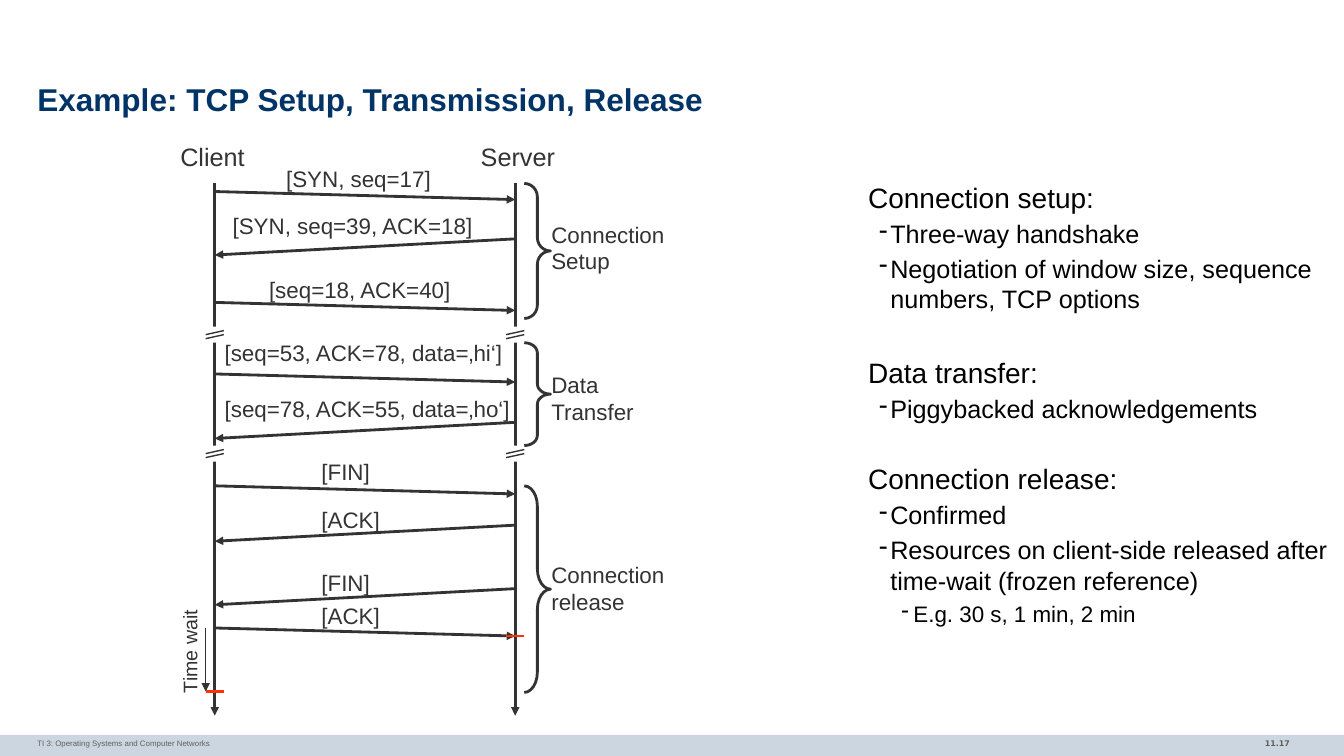
import pptx
import pptx.util
import pptx.dml.color
import pptx.enum.shapes
import pptx.enum.text
import pptx.oxml.ns
from dataclasses import dataclass
from lxml import etree

Inches, Pt = pptx.util.Inches, pptx.util.Pt
Shape = pptx.enum.shapes.MSO_SHAPE
Align = pptx.enum.text.PP_ALIGN
Anchor = pptx.enum.text.MSO_ANCHOR


@dataclass(frozen=True)
class Theme:
    font: str = "Arial"
    number_font: str = "DejaVu Sans"
    title: str = "003366"
    body: str = "000000"
    diagram: str = "333333"
    accent: str = "FF3300"
    footer: str = "5F5F5F"
    band: str = "CCD6E0"
    paper: str = "FFFFFF"
    title_size: float = 22.5
    footer_size: float = 5.6
    host_size: float = 18
    label_size: float = 16
    wait_size: float = 14
    body_sizes: tuple = (20, 18, 16)
    thick: float = 2
    thin: float = 1


THEME = Theme()

TITLE = "Example: TCP Setup, Transmission, Release"
FOOTER = "TI 3: Operating Systems and Computer Networks"
PAGE = "11.17"

# level, text, space before in points
NOTES = [
    (0, "Connection setup:", 0),
    (1, "Three-way handshake", 2.8),
    (1, "Negotiation of window size, sequence numbers, TCP options", 2.8),
    (0, "Data transfer:", 29),
    (1, "Piggybacked acknowledgements", 2.8),
    (0, "Connection release:", 26.7),
    (1, "Confirmed", 2.8),
    (1, "Resources on client-side released after time-wait (frozen reference)", 2.8),
    (2, "E.g. 30 s, 1 min, 2 min", 2.8),
]
INDENTS = [(0, 0), (0.22, -0.11), (0.45, -0.12)]

CLIENT_X, SERVER_X = 2.13, 5.11
LIFE_TOP, LIFE_BOTTOM = 1.82, 7.1
TICK = 0.09
# name, left, width
HOSTS = [("Client", 1.69, 0.84), ("Server", 4.67, 0.94)]
# text, to server, time sent, label left, label top, label width
MESSAGES = [
    ("[SYN, seq=17]", True, 1.9, 2.74, 1.59, 1.64),
    ("[SYN, seq=39, ACK=18]", False, 2.37, 2.21, 2.06, 2.6),
    ("[seq=18, ACK=40]", True, 3.0, 2.57, 2.69, 2.02),
    ("[seq=53, ACK=78, data=‚hi‘]", True, 3.71, 2.13, 3.32, 2.97),
    ("[seq=78, ACK=55, data=‚ho‘]", False, 4.19, 2.13, 3.87, 3.05),
    ("[FIN]", True, 4.82, 3.09, 4.5, 0.68),
    ("[ACK]", False, 5.21, 3.09, 4.97, 0.78),
    ("[FIN]", False, 5.84, 3.09, 5.6, 0.68),
    ("[ACK]", True, 6.23, 3.09, 5.92, 0.78),
]
DELAY_TO_SERVER, DELAY_TO_CLIENT = 0.08, 0.16
# lines, brace top, brace height, label top, label width
PHASES = [
    (("Connection", "Setup"), 1.82, 1.34, 2.14, 1.32),
    (("Data", "Transfer"), 3.4, 1.02, 3.63, 1.03),
    (("Connection", "release"), 4.82, 2.05, 5.52, 1.32),
]
BREAKS = [3.32, 4.5]
WAIT_START, WAIT_END, LAST_ACK = 6.23, 6.86, 6.31


def rgb(value):
    return pptx.dml.color.RGBColor.from_string(value)


def style(paragraph, size, color, bold=False, font=THEME.font):
    paragraph.font.name = font
    paragraph.font.size = Pt(size)
    paragraph.font.bold = bold
    paragraph.font.color.rgb = rgb(color)


def add_text(slide, box, lines, size, color, margins=(0.1, 0.05), wrap=False, **font):
    shape = slide.shapes.add_textbox(*map(Inches, box))
    frame = shape.text_frame
    frame.word_wrap = wrap
    frame.margin_left = frame.margin_right = Inches(margins[0])
    frame.margin_top = frame.margin_bottom = Inches(margins[1])
    frame.text = "\n".join(lines)
    for paragraph in frame.paragraphs:
        style(paragraph, size, color, **font)
    return shape


def add_label(slide, box, lines, size=THEME.label_size):
    """Add diagram text whose box fits its text."""
    shape = add_text(slide, box, lines, size, THEME.diagram)
    shape.text_frame.auto_size = pptx.enum.text.MSO_AUTO_SIZE.SHAPE_TO_FIT_TEXT
    return shape


def add_line(slide, start, end, width=THEME.thick, color=THEME.diagram, arrow=False):
    line = slide.shapes.add_connector(
        pptx.enum.shapes.MSO_CONNECTOR.STRAIGHT, *map(Inches, (*start, *end)))
    line.line.width = Pt(width)
    line.line.color.rgb = rgb(color)
    if arrow:
        etree.SubElement(line.line._get_or_add_ln(),
                         pptx.oxml.ns.qn("a:tailEnd"), type="triangle")
    etree.SubElement(line._element.spPr, pptx.oxml.ns.qn("a:effectLst"))


def add_block(slide, box, color):
    block = slide.shapes.add_shape(Shape.RECTANGLE, *map(Inches, box))
    block.shadow.inherit = False
    block.fill.solid()
    block.fill.fore_color.rgb = rgb(color)
    block.line.fill.background()


def add_frame(slide):
    add_block(slide, (0, 7.29, 13.33, 0.21), THEME.band)
    page = add_text(slide, (11.1, 7.28, 1.79, 0.23), [PAGE], THEME.footer_size,
                    THEME.footer, wrap=True, bold=True, font=THEME.number_font)
    page.text_frame.paragraphs[0].alignment = Align.RIGHT
    title = add_text(slide, (0.37, 0.78, 12.6, 0.47), [TITLE], THEME.title_size,
                     THEME.title, margins=(0, 0), wrap=True, bold=True)
    title.text_frame.vertical_anchor = Anchor.MIDDLE
    title.text_frame.paragraphs[0].line_spacing = 0.85
    add_text(slide, (0.37, 7.28, 8.72, 0.22), [FOOTER], THEME.footer_size,
             THEME.footer, margins=(0, 0.05), wrap=True)


def add_notes(slide):
    shape = add_text(slide, (8.61, 1.75, 4.72, 5.17), [text for _, text, _ in NOTES],
                     THEME.body_sizes[0], THEME.body, margins=(0, 0.03), wrap=True)
    for paragraph, (level, _, space) in zip(shape.text_frame.paragraphs, NOTES):
        paragraph.level = level
        paragraph.line_spacing = 1.02
        paragraph.space_before = Pt(space)
        if level:
            properties = paragraph._p.get_or_add_pPr()
            left, hanging = INDENTS[level]
            properties.set("marL", str(Inches(left)))
            properties.set("indent", str(Inches(hanging)))
            bullet_color = etree.SubElement(properties, pptx.oxml.ns.qn("a:buClr"))
            etree.SubElement(bullet_color, pptx.oxml.ns.qn("a:srgbClr"), val=THEME.body)
            etree.SubElement(properties, pptx.oxml.ns.qn("a:buChar"), char="-")
        paragraph.font.size = Pt(THEME.body_sizes[level])


def add_lifelines(slide):
    for (name, left, width), x in zip(HOSTS, (CLIENT_X, SERVER_X)):
        add_label(slide, (left, 1.35, width, 0.4), [name], THEME.host_size)
        add_line(slide, (x, LIFE_TOP), (x, LIFE_BOTTOM), arrow=True)
        for y in BREAKS:
            add_block(slide, (x - 0.18, y - 0.08, 0.36, 0.16), THEME.paper)
            for slash in (y, y + 0.04):
                add_line(slide, (x - TICK, slash), (x + TICK, slash - 0.04), THEME.thin)


def add_messages(slide):
    for text, to_server, sent, left, top, width in MESSAGES:
        if to_server:
            start, end = (CLIENT_X, sent), (SERVER_X, sent + DELAY_TO_SERVER)
        else:
            start, end = (SERVER_X, sent), (CLIENT_X, sent + DELAY_TO_CLIENT)
        add_line(slide, start, end, arrow=True)
        add_label(slide, (left, top, width, 0.37), [text])


def add_phases(slide):
    for lines, top, height, label_top, label_width in PHASES:
        brace = slide.shapes.add_shape(
            Shape.RIGHT_BRACE, *map(Inches, (SERVER_X + TICK, top, 0.26, height)))
        brace.shadow.inherit = False
        brace.adjustments[0] = 0.38 * height
        brace.fill.background()
        brace.line.width = Pt(THEME.thick)
        brace.line.color.rgb = rgb(THEME.diagram)
        add_label(slide, (5.37, label_top, label_width, 0.64), lines)


def add_time_wait(slide):
    add_line(slide, (CLIENT_X - TICK, WAIT_START), (CLIENT_X - TICK, WAIT_END),
             THEME.thin, arrow=True)
    for x, y in ((CLIENT_X, WAIT_END), (SERVER_X, LAST_ACK)):
        add_line(slide, (x - TICK, y), (x + TICK, y), color=THEME.accent)
    label = add_label(slide, (1.37, 6.29, 1.03, 0.34), ["Time wait"], THEME.wait_size)
    label.rotation = 270


def main():
    presentation = pptx.Presentation()
    presentation.slide_width, presentation.slide_height = Inches(13.33), Inches(7.5)
    slide = presentation.slides.add_slide(presentation.slide_layouts[6])
    for add_part in (add_frame, add_notes, add_lifelines, add_messages,
                     add_phases, add_time_wait):
        add_part(slide)
    presentation.save("out.pptx")


if __name__ == "__main__":
    main()
